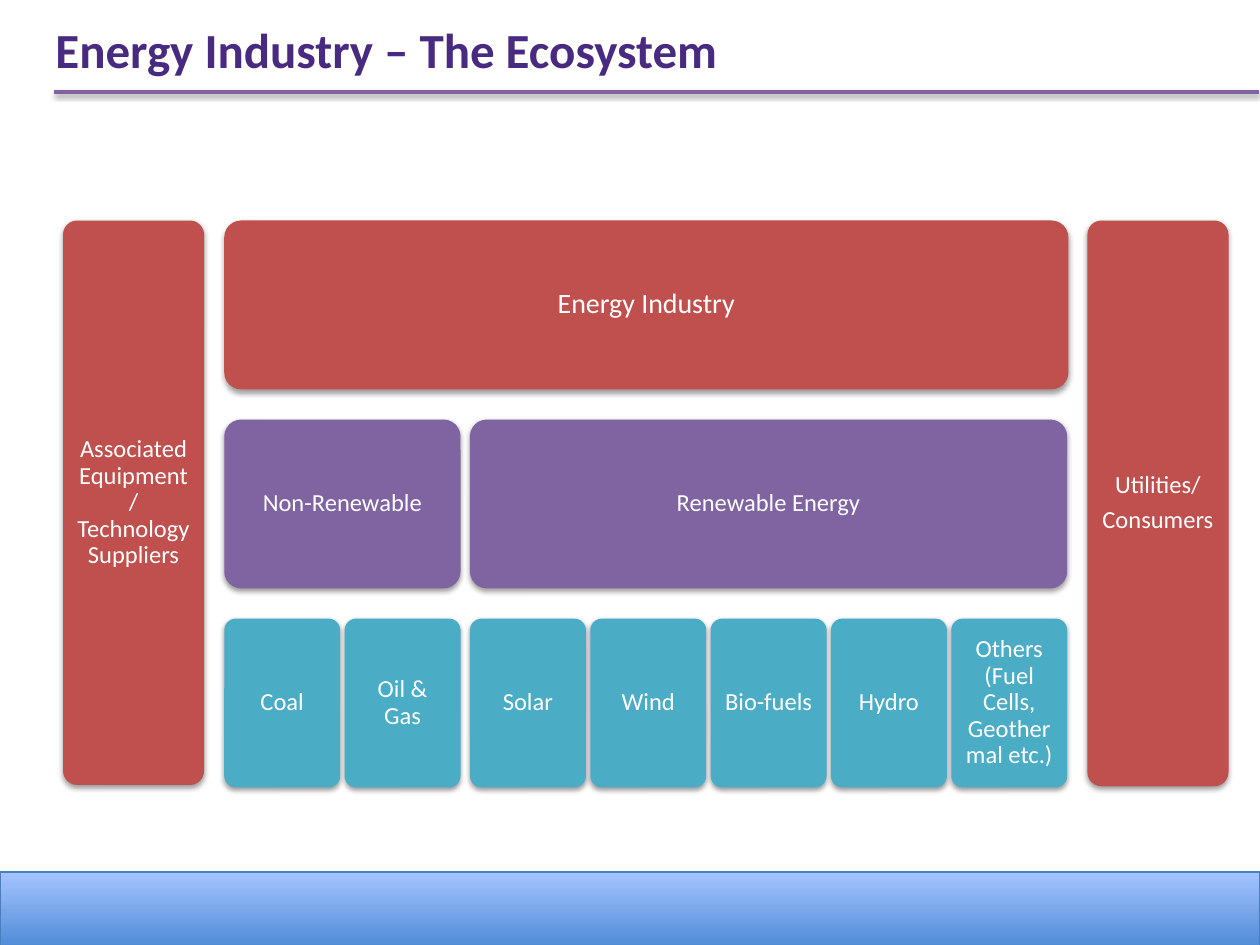
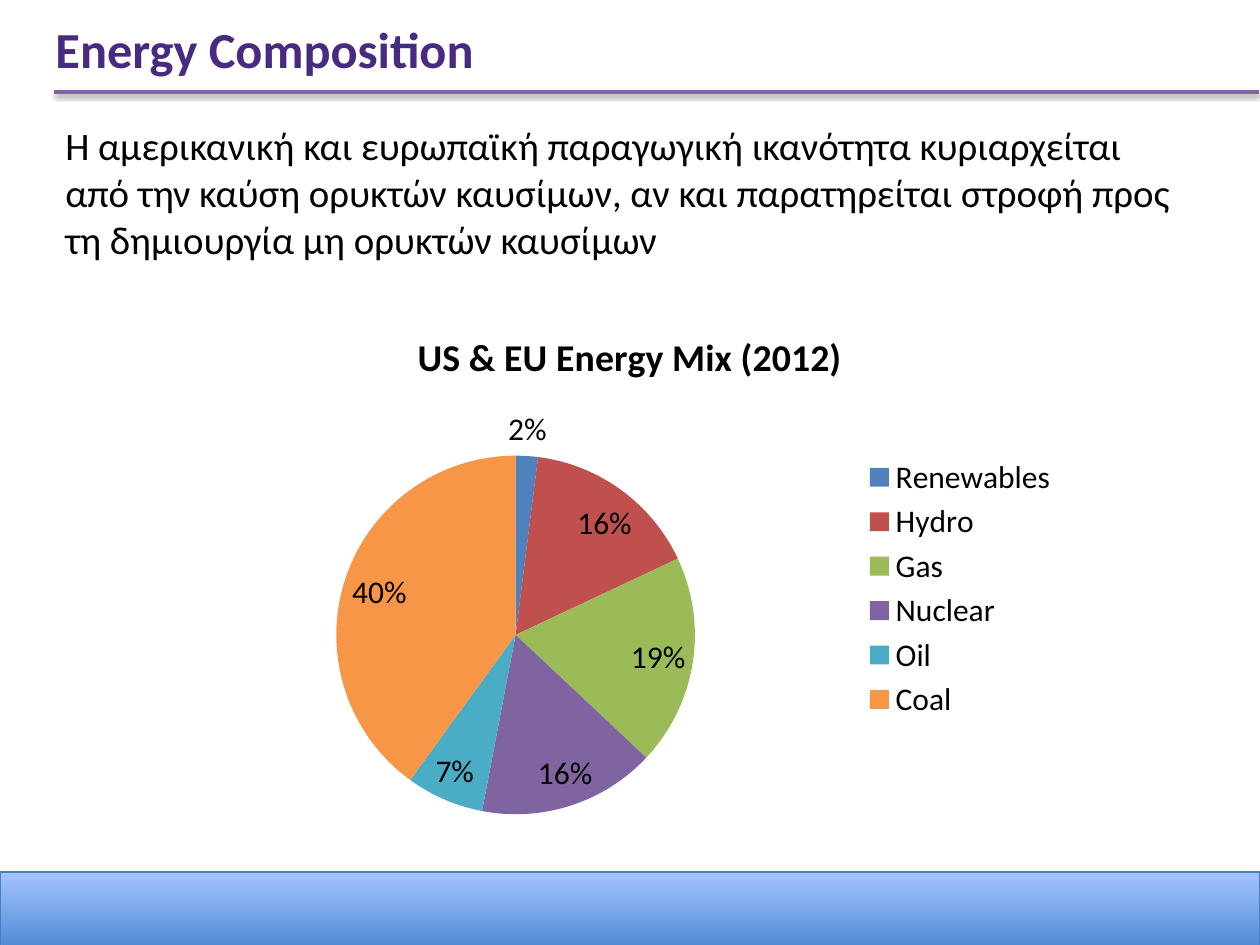
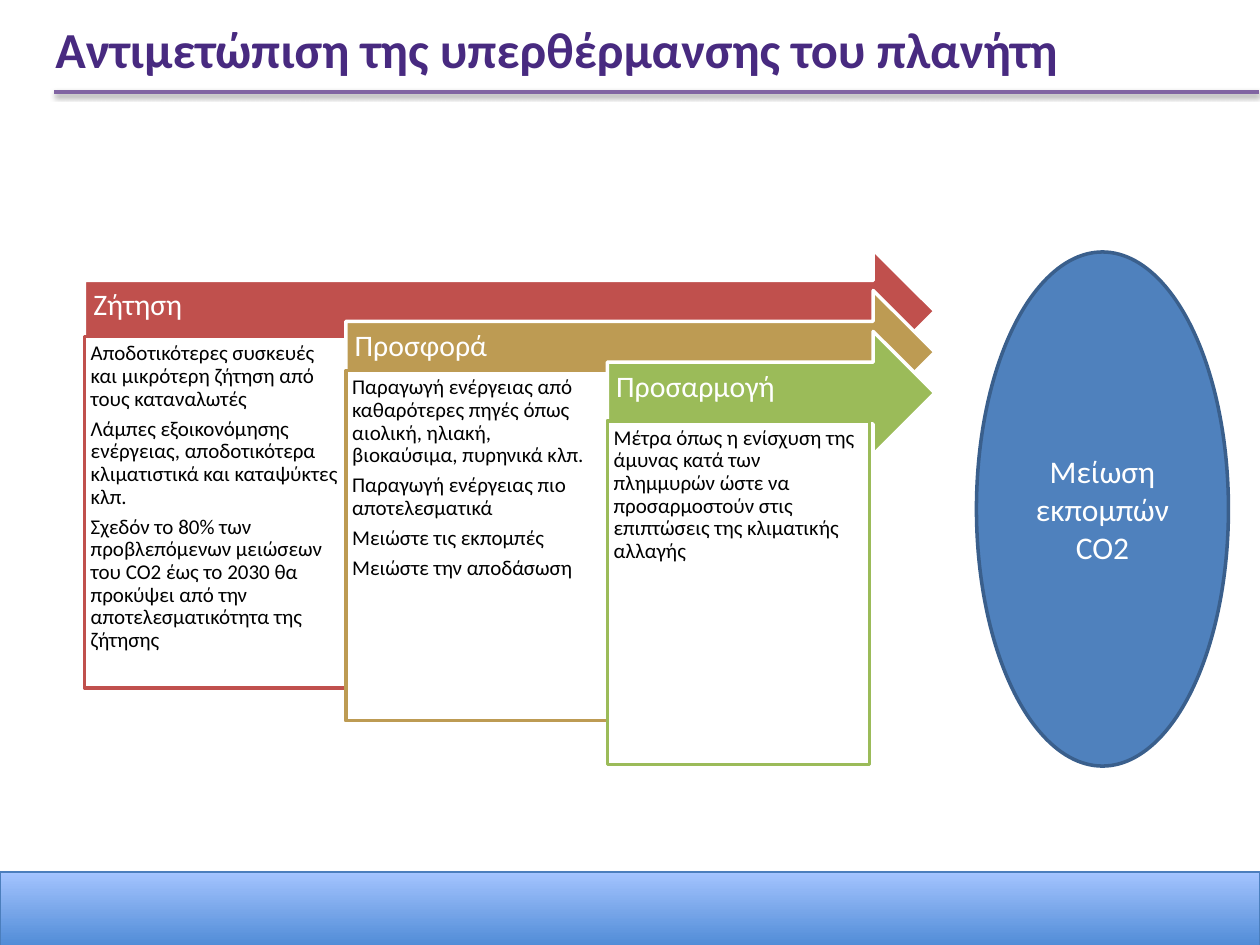
from dataclasses import dataclass

from lxml import etree
from pptx import Presentation
from pptx.chart.data import CategoryChartData
from pptx.dml.color import RGBColor
from pptx.enum.chart import XL_CHART_TYPE, XL_LABEL_POSITION, XL_LEGEND_POSITION
from pptx.enum.shapes import MSO_CONNECTOR, MSO_SHAPE
from pptx.enum.text import MSO_ANCHOR, MSO_AUTO_SIZE, PP_ALIGN
from pptx.oxml.ns import qn
from pptx.util import Inches, Pt

# Enum members
PIE = XL_CHART_TYPE.PIE
BEST_FIT = XL_LABEL_POSITION.BEST_FIT
LEGEND_RIGHT = XL_LEGEND_POSITION.RIGHT
STRAIGHT = MSO_CONNECTOR.STRAIGHT
RECTANGLE = MSO_SHAPE.RECTANGLE
ROUNDED = MSO_SHAPE.ROUNDED_RECTANGLE
ARROW = MSO_SHAPE.RIGHT_ARROW
OVAL = MSO_SHAPE.OVAL
TOP, MIDDLE = MSO_ANCHOR.TOP, MSO_ANCHOR.MIDDLE
LEFT, CENTER = PP_ALIGN.LEFT, PP_ALIGN.CENTER

# Shared look
FONT = "Calibri"
WHITE = RGBColor(0xFF, 0xFF, 0xFF)
BLACK = RGBColor(0x00, 0x00, 0x00)
TITLE_PURPLE = RGBColor(0x48, 0x2A, 0x80)
BLUE = RGBColor(0x4F, 0x81, 0xBD)
DARK_BLUE = RGBColor(0x3A, 0x5F, 0x8C)
RED = RGBColor(0xC0, 0x50, 0x4D)
GREEN = RGBColor(0x9B, 0xBB, 0x59)
PURPLE = RGBColor(0x80, 0x64, 0xA2)
TEAL = RGBColor(0x4B, 0xAC, 0xC6)
ORANGE = RGBColor(0xF7, 0x96, 0x46)
GOLD = RGBColor(0xBD, 0x9B, 0x53)
BAND_BOTTOM = RGBColor(0x3F, 0x80, 0xCE)
BAND_TOP = RGBColor(0xA4, 0xC4, 0xFF)
BAND_LINE = RGBColor(0x4B, 0x7E, 0xBC)

TITLE_ONLY_LAYOUT = 5


@dataclass
class Box:
    left: float
    top: float
    width: float
    height: float

    def lengths(self):
        return [Inches(value) for value in (self.left, self.top, self.width, self.height)]


@dataclass
class Block:
    text: str
    box: Box
    color: RGBColor
    size: float = 14


@dataclass
class Stage:
    heading: str
    points: list[str]
    color: RGBColor
    panel_top: float
    panel_height: float


def write_text(text_frame, text: str, *, size: float, color: RGBColor, bold: bool = False,
               align=LEFT, anchor=TOP, insets=(0.1, 0.05, 0.1, 0.05),
               line_spacing: float = 1, space_after: float = 0) -> None:
    """Fill a frame; each line of text becomes a paragraph, space_after is a share of size."""
    text_frame.text = text
    text_frame.word_wrap = True
    text_frame.auto_size = MSO_AUTO_SIZE.NONE
    text_frame.vertical_anchor = anchor
    (text_frame.margin_left, text_frame.margin_top,
     text_frame.margin_right, text_frame.margin_bottom) = map(Inches, insets)
    for paragraph in text_frame.paragraphs:
        paragraph.alignment = align
        paragraph.line_spacing = line_spacing
        paragraph.space_after = Pt(size * space_after)
        font = paragraph.font
        font.name, font.size, font.bold = FONT, Pt(size), bold
        font.color.rgb = color


def add_shadow(shape, opacity: int = 38, distance: float = 1.6) -> None:
    """Give a shape or connector a soft shadow straight below it."""
    properties = shape._element.spPr
    for old_effects in properties.findall(qn("a:effectLst")):
        properties.remove(old_effects)
    effects = etree.SubElement(properties, qn("a:effectLst"))
    shadow = etree.SubElement(effects, qn("a:outerShdw"), blurRad=str(Pt(3.1)),
                              dist=str(Pt(distance)), dir="5400000", rotWithShape="0")
    color = etree.SubElement(shadow, qn("a:srgbClr"), val=str(BLACK))
    etree.SubElement(color, qn("a:alpha"), val=str(opacity * 1000))


def add_filled_shape(slide, preset, box: Box, fill: RGBColor, line: RGBColor | None = None):
    shape = slide.shapes.add_shape(preset, *box.lengths())
    shape.shadow.inherit = False
    shape.fill.solid()
    shape.fill.fore_color.rgb = fill
    if line is None:
        shape.line.fill.background()
    else:
        shape.line.color.rgb = line
        shape.line.width = Pt(2)
    return shape


def add_titled_slide(presentation, title: str, size: float = 28.8):
    """Add a slide with its title and the rule below it."""
    slide = presentation.slides.add_slide(presentation.slide_layouts[TITLE_ONLY_LAYOUT])
    placeholder = slide.shapes.title
    (placeholder.left, placeholder.top,
     placeholder.width, placeholder.height) = Box(0.34, 0.08, 9, 0.61).lengths()
    write_text(placeholder.text_frame, title, size=size, color=TITLE_PURPLE,
               bold=True, anchor=MIDDLE)
    rule = slide.shapes.add_connector(STRAIGHT, Inches(0.43), Inches(0.73),
                                      Inches(9.99), Inches(0.73))
    rule.line.color.rgb = PURPLE
    rule.line.width = Pt(2)
    add_shadow(rule)
    return slide


def add_footer_band(slide) -> None:
    band = slide.shapes.add_shape(RECTANGLE, *Box(0, 6.92, 10, 0.71).lengths())
    band.fill.gradient()
    band.fill.gradient_angle = 90
    for stop, color in zip(band.fill.gradient_stops, (BAND_BOTTOM, BAND_TOP)):
        stop.color.rgb = color
    band.line.color.rgb = BAND_LINE
    band.line.width = Pt(0.75)
    add_shadow(band, opacity=35, distance=1.8)


# Slide 1: ecosystem blocks
def add_block(slide, block: Block) -> None:
    shape = add_filled_shape(slide, ROUNDED, block.box, block.color)
    # Same corner radius rule for every block: a tenth of the shorter side
    shape.adjustments[0] = 0.1
    add_shadow(shape)
    write_text(shape.text_frame, block.text, size=block.size, color=WHITE, align=CENTER,
               anchor=MIDDLE, insets=(0.08,) * 4, line_spacing=0.9, space_after=0.35)


def build_ecosystem(presentation) -> None:
    slide = add_titled_slide(presentation, "Energy Industry – The Ecosystem", size=28)
    grid_left, grid_top = 1.78, 1.75
    source_width, source_pitch, family_gap = 0.92, 0.955, 0.04
    row_height, row_pitch = 1.34, 1.58
    families = {
        "Non-Renewable": ["Coal", "Oil & Gas"],
        "Renewable Energy": ["Solar", "Wind", "Bio-fuels", "Hydro",
                             "Others (Fuel Cells, Geothermal etc.)"],
    }

    # Side columns and the top row
    blocks = [
        Block("Associated Equipment/ Technology Suppliers", Box(0.5, grid_top, 1.12, 4.48), RED),
        Block("Energy Industry", Box(grid_left, grid_top, 6.7, row_height), RED, 16),
        Block("Utilities/\nConsumers", Box(8.63, grid_top, 1.12, 4.49), RED),
    ]
    # Each family spans the sources below it
    left = grid_left
    for family, sources in families.items():
        family_width = source_pitch * (len(sources) - 1) + source_width
        blocks.append(Block(family, Box(left, grid_top + row_pitch, family_width, row_height),
                            PURPLE))
        for source in sources:
            blocks.append(Block(source, Box(left, grid_top + 2 * row_pitch, source_width,
                                            row_height), TEAL))
            left += source_pitch
        left += family_gap
    for block in blocks:
        add_block(slide, block)
    add_footer_band(slide)


# Slide 2: energy mix
def add_energy_pie(slide) -> None:
    mix = {
        "Renewables": (0.02, BLUE),
        "Hydro": (0.16, RED),
        "Gas": (0.19, GREEN),
        "Nuclear": (0.16, PURPLE),
        "Oil": (0.07, TEAL),
        "Coal": (0.4, ORANGE),
    }
    chart_data = CategoryChartData(number_format="0%")
    chart_data.categories = list(mix)
    chart_data.add_series("Series 1", [share for share, _ in mix.values()])
    chart = slide.shapes.add_chart(PIE, *Box(1.5, 2.42, 7, 4.5).lengths(), chart_data).chart
    chart.font.name, chart.font.size = FONT, Pt(18)
    chart.font.color.rgb = BLACK

    chart.has_title = True
    chart.chart_title.include_in_layout = False
    chart.chart_title.text_frame.text = "US & EU Energy Mix (2012)"
    title_font = chart.chart_title.text_frame.paragraphs[0].font
    title_font.name, title_font.size, title_font.bold = FONT, Pt(21.6), True
    title_font.color.rgb = BLACK

    chart.has_legend = True
    chart.legend.position = LEGEND_RIGHT
    chart.legend.include_in_layout = False

    plot = chart.plots[0]
    plot.vary_by_categories = True
    plot.has_data_labels = True
    labels = plot.data_labels
    labels.show_value, labels.show_percentage = True, False
    labels.number_format, labels.number_format_is_linked = "0%", False
    labels.position = BEST_FIT
    for index, (_, color) in enumerate(mix.values()):
        fill = plot.series[0].points[index].format.fill
        fill.solid()
        fill.fore_color.rgb = color


def build_composition(presentation) -> None:
    slide = add_titled_slide(presentation, "Energy Composition")
    summary = slide.shapes.add_textbox(*Box(0.42, 0.92, 9, 1.33).lengths())
    write_text(summary.text_frame,
               "Η αμερικανική και ευρωπαϊκή παραγωγική ικανότητα κυριαρχείται από την καύση "
               "ορυκτών καυσίμων, αν και παρατηρείται στροφή προς τη δημιουργία μη ορυκτών "
               "καυσίμων", size=22.2, color=BLACK)
    add_energy_pie(slide)
    add_footer_band(slide)


# Slide 3: stages leading to lower emissions
STAGES = [
    Stage("Ζήτηση", [
        "Αποδοτικότερες συσκευές και μικρότερη ζήτηση από τους καταναλωτές",
        "Λάμπες εξοικονόμησης ενέργειας, αποδοτικότερα κλιματιστικά και καταψύκτες κλπ.",
        "Σχεδόν το 80% των προβλεπόμενων μειώσεων του CO2 έως το 2030 θα προκύψει από την "
        "αποτελεσματικότητα της ζήτησης",
    ], RED, 2.67, 2.79),
    Stage("Προσφορά", [
        "Παραγωγή ενέργειας από καθαρότερες πηγές όπως αιολική, ηλιακή, βιοκαύσιμα, "
        "πυρηνικά κλπ.",
        "Παραγωγή ενέργειας πιο αποτελεσματικά",
        "Μειώστε τις εκπομπές",
        "Μειώστε την αποδάσωση",
    ], GOLD, 2.94, 2.78),
    Stage("Προσαρμογή", [
        "Μέτρα όπως η ενίσχυση της άμυνας κατά των πλημμυρών ώστε να προσαρμοστούν στις "
        "επιπτώσεις της κλιματικής αλλαγής",
    ], GREEN, 3.34, 2.73),
]


def add_stage(slide, stage: Stage, left: float, top: float) -> None:
    arrow_tip = 7.42
    arrow = add_filled_shape(slide, ARROW, Box(left, top, arrow_tip - left, 0.98),
                             stage.color, WHITE)
    write_text(arrow.text_frame, stage.heading, size=17, color=WHITE, anchor=MIDDLE,
               insets=(0.07, 0.07, 0.28, 0.16), line_spacing=0.9, space_after=0.35)
    panel = add_filled_shape(slide, RECTANGLE,
                             Box(left, stage.panel_top, 2.08, stage.panel_height),
                             WHITE, stage.color)
    write_text(panel.text_frame, "\n".join(stage.points), size=12, color=BLACK,
               insets=(0.05,) * 4, line_spacing=0.9, space_after=0.35)


def build_warming_response(presentation) -> None:
    slide = add_titled_slide(presentation, "Αντιμετώπιση της υπερθέρμανσης του πλανήτη")
    for index, stage in enumerate(STAGES):
        add_stage(slide, stage, left=0.67 + 2.075 * index, top=1.98 + 0.325 * index)
    outcome = add_filled_shape(slide, OVAL, Box(7.75, 2, 2, 4.08), BLUE, DARK_BLUE)
    write_text(outcome.text_frame, "Μείωση εκπομπών CO2", size=18, color=WHITE,
               align=CENTER, anchor=MIDDLE)
    add_footer_band(slide)


def main() -> None:
    presentation = Presentation()
    presentation.slide_width = Inches(10)
    presentation.slide_height = Inches(7.5)
    build_ecosystem(presentation)
    build_composition(presentation)
    build_warming_response(presentation)
    presentation.save("out.pptx")


if __name__ == "__main__":
    main()
